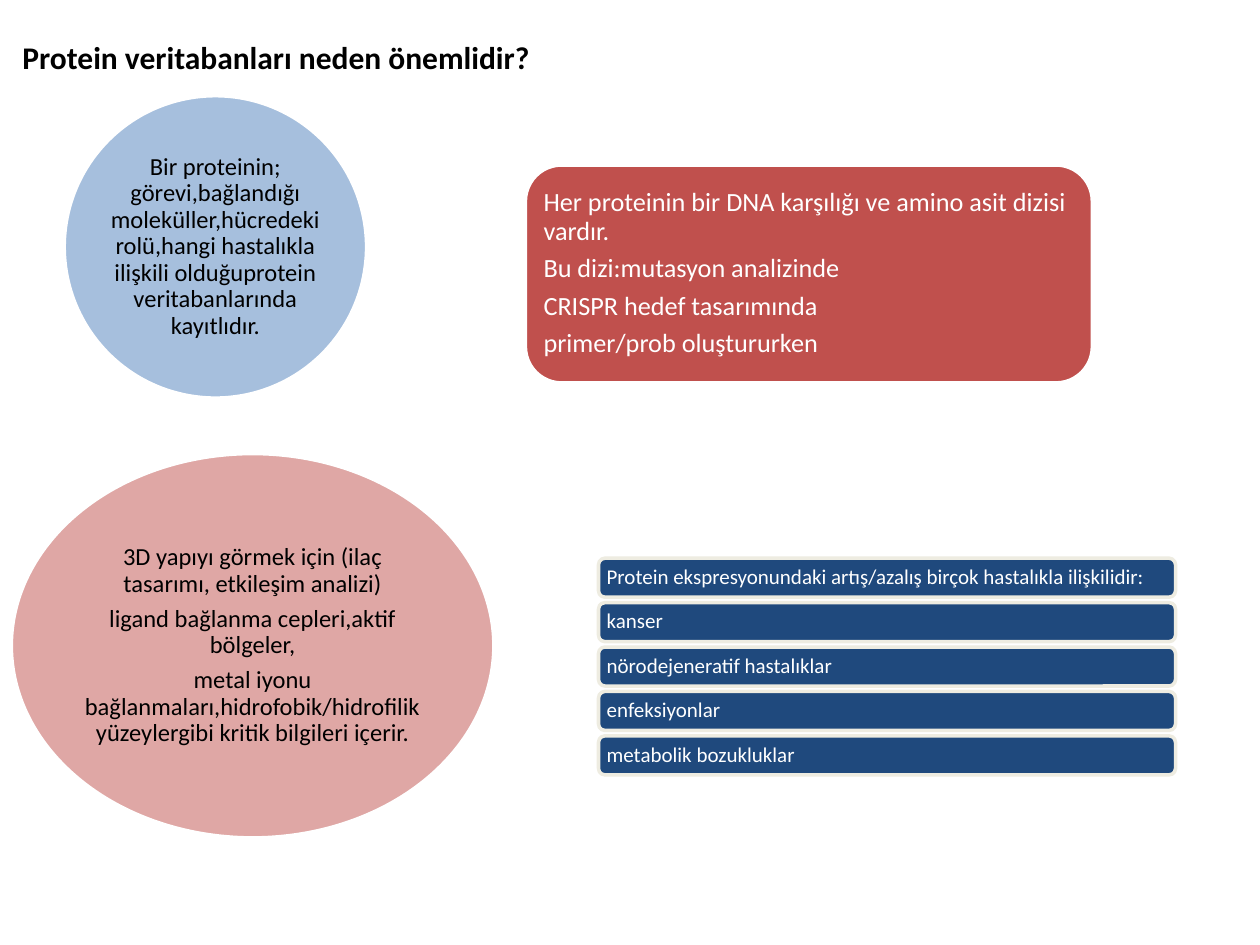
from dataclasses import dataclass

from lxml import etree
from pptx import Presentation
from pptx import util as u
from pptx.dml.color import RGBColor
from pptx.enum import shapes, text
from pptx.oxml import ns

ELLIPSE = shapes.MSO_SHAPE.OVAL
ROUNDED = shapes.MSO_SHAPE.ROUNDED_RECTANGLE
LEFT, CENTER = text.PP_ALIGN.LEFT, text.PP_ALIGN.CENTER
BAR_TOP, BAR_PITCH = 4.43, 0.3525


@dataclass(frozen=True)
class Panel:
    kind: shapes.MSO_SHAPE
    box: tuple[float, float, float, float]
    fill: str
    lines: tuple[str, ...]
    size: int
    color: str = "FFFFFF"
    outline: str = "FFFFFF"
    align: text.PP_ALIGN = LEFT
    inset: float = 0
    opacity: int = 100


def rgb(value: str) -> RGBColor:
    return RGBColor.from_string(value)


def set_font(font, size: int, color: str, bold: bool = False) -> None:
    values = {"name": "Calibri", "size": u.Pt(size), "bold": bold}
    for name, value in values.items():
        setattr(font, name, value)
    font.color.rgb = rgb(color)


def set_opacity(shape, percent: int) -> None:
    color = shape.fill._xPr.find(ns.qn("a:solidFill"))[0]
    etree.SubElement(color, ns.qn("a:alpha"), val=str(percent * 1000))


def write_lines(frame, panel: Panel) -> None:
    margins = ("margin_left", "margin_top", "margin_right", "margin_bottom")
    values = dict.fromkeys(margins, u.Inches(panel.inset))
    values |= {"word_wrap": True, "vertical_anchor": text.MSO_ANCHOR.MIDDLE}
    for name, value in values.items():
        setattr(frame, name, value)
    paragraph_format = {
        "alignment": panel.align,
        "line_spacing": 0.9,
        "space_after": u.Pt(panel.size * 0.35),
    }
    for index, line in enumerate(panel.lines):
        paragraph = frame.add_paragraph() if index else frame.paragraphs[0]
        for name, value in paragraph_format.items():
            setattr(paragraph, name, value)
        run = paragraph.add_run()
        run.text = line
        set_font(run.font, panel.size, panel.color)


def add_panel(slide, panel: Panel) -> None:
    shape = slide.shapes.add_shape(panel.kind, *map(u.Inches, panel.box))
    shape.shadow.inherit = False
    shape.fill.solid()
    shape.fill.fore_color.rgb = rgb(panel.fill)
    if panel.opacity < 100:
        set_opacity(shape, panel.opacity)
    shape.line.color.rgb = rgb(panel.outline)
    shape.line.width = u.Pt(2)
    write_lines(shape.text_frame, panel)


def add_title(slide, title: str) -> None:
    shape = slide.shapes.add_textbox(*map(u.Inches, (0.08, 0.25, 5, 0.4)))
    frame = shape.text_frame
    frame.word_wrap = True
    frame.auto_size = text.MSO_AUTO_SIZE.SHAPE_TO_FIT_TEXT
    run = frame.paragraphs[0].add_run()
    run.text = title
    set_font(run.font, 18, "000000", bold=True)


PANELS = (
    Panel(
        ELLIPSE, (0.51, 0.76, 2.4, 2.4), "4F81BD",
        ("Bir proteinin; görevi,bağlandığı moleküller,hücredeki rolü,hangi hastalıkla "
         "ilişkili olduğuprotein veritabanlarında kayıtlıdır.",),
        14, "000000", align=CENTER, opacity=50,
    ),
    Panel(
        ROUNDED, (4.17, 1.31, 4.5, 1.73), "C0504D",
        ("Her proteinin bir DNA karşılığı ve amino asit dizisi vardır.",
         "Bu dizi:mutasyon analizinde",
         "CRISPR hedef tasarımında",
         "primer/prob oluştururken"),
        15, inset=0.06,
    ),
    Panel(
        ELLIPSE, (0.09, 3.6, 3.83, 3.05), "C0504D",
        ("3D yapıyı görmek için (ilaç tasarımı, etkileşim analizi)",
         "ligand bağlanma cepleri,aktif bölgeler,",
         "metal iyonu bağlanmaları,hidrofobik/hidrofilik yüzeylergibi kritik bilgileri içerir."),
        14, "000000", align=CENTER, opacity=50,
    ),
)

BARS = (
    "Protein ekspresyonundaki artış/azalış birçok hastalıkla ilişkilidir:",
    "kanser",
    "nörodejeneratif hastalıklar",
    "enfeksiyonlar",
    "metabolik bozukluklar",
)


def main() -> None:
    """Build the slide on why protein databases matter."""
    presentation = Presentation()
    presentation.slide_width = u.Inches(10)
    presentation.slide_height = u.Inches(7.5)
    slide = presentation.slides.add_slide(presentation.slide_layouts[6])
    add_title(slide, "Protein veritabanları neden önemlidir?")
    for panel in PANELS:
        add_panel(slide, panel)
    for index, label in enumerate(BARS):
        box = (4.75, BAR_TOP + index * BAR_PITCH, 4.58, 0.31)
        add_panel(slide, Panel(ROUNDED, box, "1F497D", (label,), 12, outline="EEECE1", inset=0.05))
    presentation.save("out.pptx")


if __name__ == "__main__":
    main()
